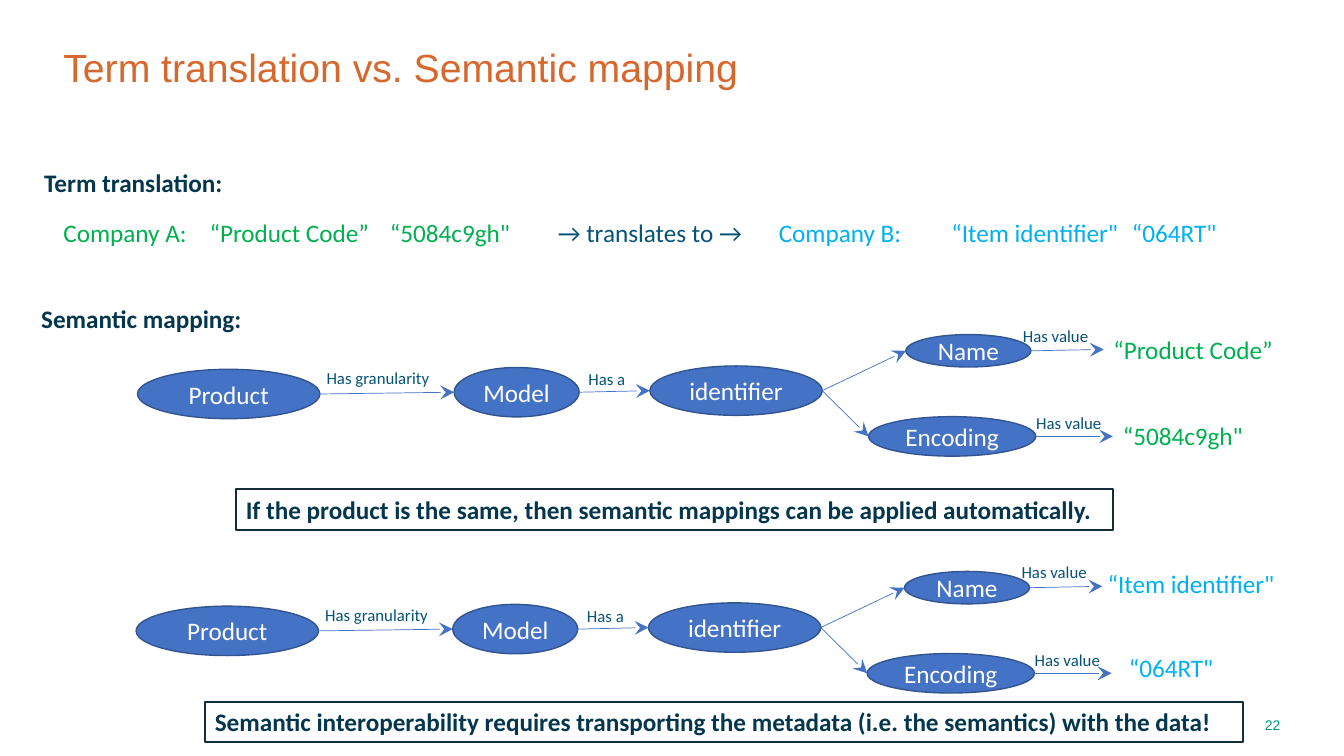
from dataclasses import dataclass

import lxml.etree
import pptx
import pptx.dml.color
import pptx.enum.shapes
import pptx.enum.text
import pptx.oxml.ns
import pptx.util

Pt = pptx.util.Pt
ALIGN = pptx.enum.text.PP_ALIGN
ANCHOR = pptx.enum.text.MSO_ANCHOR
SHAPE = pptx.enum.shapes.MSO_SHAPE


@dataclass(frozen=True)
class Theme:
    heading_font: str = "Arial"
    body_font: str = "Calibri"
    title_size: float = 28
    body_size: float = 18
    label_size: float = 12
    number_size: float = 10
    title: str = "D5682D"
    number: str = "00997F"
    strong: str = "04364D"
    label: str = "065376"
    company_a: str = "00B050"
    company_b: str = "00B0F0"
    node: str = "4472C4"
    node_edge: str = "325491"
    frame: str = "132C3B"
    white: str = "FFFFFF"


THEME = Theme()
LINE_HEIGHT = 29

# Concepts of the semantic map: left, top, width, height
CONCEPTS = {
    "Product": (98.2, 263.8, 130.3, 35.3),
    "Model": (324.4, 262.5, 89.3, 35.3),
    "identifier": (464.2, 261.4, 123.1, 35.3),
    "Name": (647.1, 239, 89.3, 23.2),
    "Encoding": (620.4, 297.6, 119.5, 28.2),
}
RELATIONS = [("Product", "Model"), ("Model", "identifier"),
             ("identifier", "Name"), ("identifier", "Encoding")]
VALUE_ENDS = {"Name": (788.4, 249.6), "Encoding": (795, 311.7)}

# Relation labels: text, left, top, width
RELATION_LABELS = [("Has granularity", 226.2, 259.2, 88.6), ("Has a", 413.2, 260, 41),
                   ("Has value", 723.6, 228.8, 62), ("Has value", 733, 291.6, 62)]


def rgb(value):
    return pptx.dml.color.RGBColor.from_string(value)


def style_text(frame, text, size, color, font=THEME.body_font, bold=False, align=ALIGN.LEFT):
    frame.text = text
    paragraph = frame.paragraphs[0]
    paragraph.alignment = align
    for run in paragraph.runs:
        run.font.name = font
        run.font.size = Pt(size)
        run.font.bold = bold
        run.font.color.rgb = rgb(color)
    return paragraph


def add_text(slide, text, left, top, width, height, color,
             size=THEME.body_size, wrap=True, **style):
    frame = slide.shapes.add_textbox(Pt(left), Pt(top), Pt(width), Pt(height)).text_frame
    frame.word_wrap = wrap
    return style_text(frame, text, size, color, **style)


def add_term(slide, text, left, top, width, color):
    return add_text(slide, text, left, top, width, LINE_HEIGHT, color, wrap=False)


def add_tab_stop(paragraph, position):
    tabs = lxml.etree.SubElement(paragraph._p.get_or_add_pPr(), pptx.oxml.ns.qn("a:tabLst"))
    lxml.etree.SubElement(tabs, pptx.oxml.ns.qn("a:tab"), pos=str(Pt(position)), algn="l")


def add_filled(slide, kind, box, fill, edge, edge_width):
    shape = slide.shapes.add_shape(kind, *map(Pt, box))
    shape.shadow.inherit = False
    shape.fill.solid()
    shape.fill.fore_color.rgb = rgb(fill)
    shape.line.color.rgb = rgb(edge)
    shape.line.width = Pt(edge_width)
    return shape.text_frame


def add_concept(slide, name, box):
    frame = add_filled(slide, SHAPE.OVAL, box, THEME.node, THEME.node_edge, 1)
    frame.word_wrap = False
    frame.vertical_anchor = ANCHOR.MIDDLE
    style_text(frame, name, THEME.body_size, THEME.white, align=ALIGN.CENTER)


def add_statement(slide, text, left, top, width):
    box = (left, top, width, LINE_HEIGHT)
    frame = add_filled(slide, SHAPE.RECTANGLE, box, THEME.white, THEME.frame, 1.5)
    frame.word_wrap = True
    frame.vertical_anchor = ANCHOR.TOP
    style_text(frame, text, THEME.body_size, THEME.strong, bold=True)


def add_arrow(slide, start, end):
    arrow = slide.shapes.add_connector(
        pptx.enum.shapes.MSO_CONNECTOR.STRAIGHT, *map(Pt, (*start, *end)))
    arrow.line.color.rgb = rgb(THEME.node)
    arrow.line.width = Pt(0.5)
    lxml.etree.SubElement(arrow.line._get_or_add_ln(), pptx.oxml.ns.qn("a:tailEnd"),
                          type="stealth", w="lg", len="lg")
    lxml.etree.SubElement(arrow._element.spPr, pptx.oxml.ns.qn("a:effectLst"))


def left_end(box):
    left, top, _, height = box
    return left, top + height / 2


def right_end(box):
    left, top, width, height = box
    return left + width, top + height / 2


def add_semantic_map(slide, dx, dy, values, color):
    boxes = {name: (left + dx, top + dy, width, height)
             for name, (left, top, width, height) in CONCEPTS.items()}
    for name, box in boxes.items():
        add_concept(slide, name, box)
    for source, target in RELATIONS:
        add_arrow(slide, right_end(boxes[source]), left_end(boxes[target]))
    for name, (x, y) in VALUE_ENDS.items():
        add_arrow(slide, right_end(boxes[name]), (x + dx, y + dy))
    for text, left, top, width in RELATION_LABELS:
        add_text(slide, text, left + dx, top + dy, width, 21.6, THEME.label,
                 size=THEME.label_size, wrap=False)
    for text, left, top, width in values:
        add_term(slide, text, left, top, width, color)


def main():
    presentation = pptx.Presentation()
    presentation.slide_width, presentation.slide_height = Pt(960), Pt(540)
    slide = presentation.slides.add_slide(presentation.slide_layouts[6])

    # Title and slide number
    title = add_text(slide, "Term translation vs. Semantic mapping", 38.2, 31, 716.4, 66.2,
                     THEME.title, size=THEME.title_size, font=THEME.heading_font)
    title.line_spacing = 0.9
    add_text(slide, "22", 885.6, 508.3, 36, 18, THEME.number, size=THEME.number_size,
             font=THEME.heading_font, align=ALIGN.RIGHT)

    # Term translation
    add_text(slide, "Term translation:", 24.5, 115.9, 602.6, LINE_HEIGHT,
             THEME.strong, bold=True)
    row = 151.5
    company_a = add_term(slide, "Company A:\t“Product Code”", 38.2, row, 254.9,
                         THEME.company_a)
    add_tab_stop(company_a, 104.4)
    add_term(slide, "“5084c9gh\"", 271.4, row, 101.5, THEME.company_a)
    add_term(slide, "→ translates to →", 391.4, row, 150, THEME.label)
    add_term(slide, "Company B:", 549.2, row, 103, THEME.company_b)
    add_term(slide, "“Item identifier\"", 672.5, row, 135.4, THEME.company_b)
    add_term(slide, "“064RT\"", 801.4, row, 75.6, THEME.company_b)

    # Semantic mapping
    add_text(slide, "Semantic mapping:", 22.3, 213.1, 248.4, LINE_HEIGHT,
             THEME.strong, bold=True)
    add_semantic_map(slide, 0, 0, [("“Product Code”", 788.2, 235, 129.6),
                                   ("“5084c9gh\"", 794.9, 296.6, 101.5)], THEME.company_a)
    add_semantic_map(slide, -1, 169.2, [("“Item identifier\"", 784.1, 402.5, 135.4),
                                        ("“064RT\"", 799.2, 462.7, 75.6)], THEME.company_b)

    # Conclusions
    add_statement(slide, "If the product is the same, then semantic mappings can be "
                  "applied automatically.", 168.5, 349.6, 626.4)
    add_statement(slide, "Semantic interoperability requires transporting the metadata "
                  "(i.e. the semantics) with the data!", 146.4, 501.1, 741.6)

    presentation.save("out.pptx")


if __name__ == "__main__":
    main()
